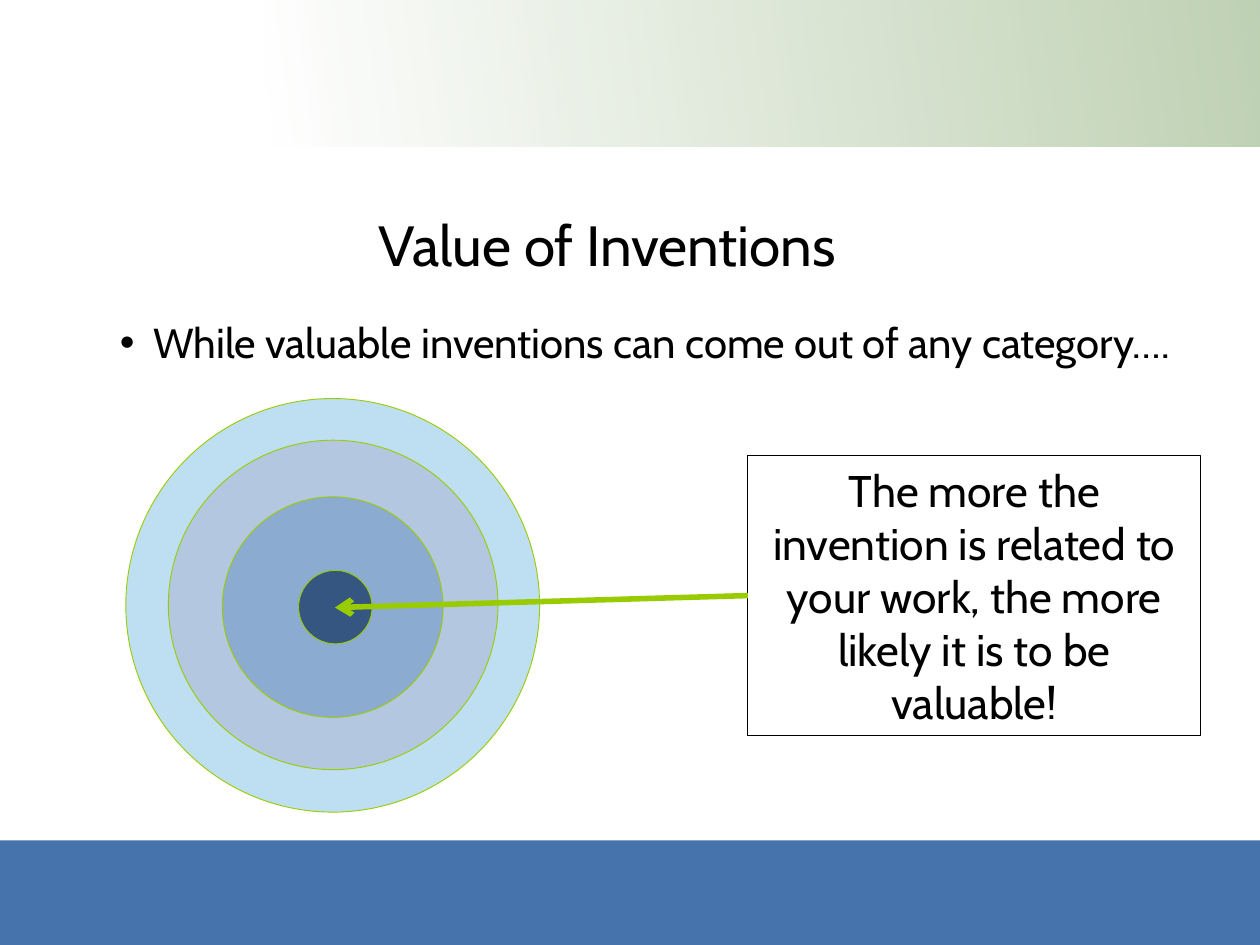
from lxml import etree
from pptx import Presentation
from pptx.dml.color import RGBColor
from pptx.enum.shapes import MSO_CONNECTOR, MSO_SHAPE
from pptx.enum.text import MSO_ANCHOR, MSO_AUTO_SIZE, PP_ALIGN
from pptx.oxml.ns import qn
from pptx.util import Inches, Pt

RECT, OVAL = MSO_SHAPE.RECTANGLE, MSO_SHAPE.OVAL
STRAIGHT = MSO_CONNECTOR.STRAIGHT
TOP, MIDDLE, BOTTOM = MSO_ANCHOR.TOP, MSO_ANCHOR.MIDDLE, MSO_ANCHOR.BOTTOM
CENTER, NO_FIT = PP_ALIGN.CENTER, MSO_AUTO_SIZE.NONE

BLACK = RGBColor(0x00, 0x00, 0x00)
WHITE = RGBColor(0xFF, 0xFF, 0xFF)
GREEN = RGBColor(0x50, 0x82, 0x31)
LIME = RGBColor(0x99, 0xCC, 0x00)
BLUE = RGBColor(0x46, 0x73, 0xAB)
SKY = RGBColor(0xBE, 0xDF, 0xF2)
MIST = RGBColor(0xB3, 0xC7, 0xE0)
STEEL = RGBColor(0x8C, 0xAB, 0xD0)
NAVY = RGBColor(0x35, 0x56, 0x80)


class Deck:
    font = "Cabin"

    def __init__(self, slide):
        self.slide = slide

    def shape(self, kind, box, fill=None, line=None):
        item = self.slide.shapes.add_shape(kind, *map(Inches, box))
        item.shadow.inherit = False
        if fill is None:
            item.fill.background()
        else:
            item.fill.solid()
            item.fill.fore_color.rgb = fill
        if line is None:
            item.line.fill.background()
        else:
            item.line.color.rgb = line
            item.line.width = Pt(0.75)
        return item

    def fade(self, box, colors, angle, alpha):
        item = self.shape(RECT, box)
        item.fill.gradient()
        item.fill.gradient_angle = angle
        for stop, color in zip(item.fill.gradient_stops, colors):
            stop.color.rgb = color
        for color in item._element.spPr.iter(qn("a:srgbClr")):
            etree.SubElement(color, qn("a:alpha"), val=str(alpha * 1000))

    def label(self, item, text, size, anchor, right=0.14):
        frame = item.text_frame
        frame.word_wrap = True
        frame.auto_size = NO_FIT
        frame.vertical_anchor = anchor
        frame.margin_left, frame.margin_right = Inches(0.14), Inches(right)
        frame.margin_top = frame.margin_bottom = Inches(0.07)
        frame.text = text
        para = frame.paragraphs[0]
        para.alignment = CENTER
        para.space_before = Pt(0)
        para.font.name = self.font
        para.font.size = Pt(size)
        para.font.color.rgb = BLACK

    def holder(self, index, box, text, size, anchor, right=0.14):
        item = self.slide.placeholders[index]
        item.left, item.top, item.width, item.height = map(Inches, box)
        if index:
            # No bullet or indent
            props = item.text_frame.paragraphs[0]._p.get_or_add_pPr()
            props.set("marL", "0")
            props.set("indent", "0")
            etree.SubElement(props, qn("a:buNone"))
        self.label(item, text, size, anchor, right)

    def arrow(self, start, side, end):
        x, y = map(Inches, end)
        line = self.slide.shapes.add_connector(STRAIGHT, x, y, x, y)
        line.begin_connect(start, side)
        line.line.color.rgb = LIME
        line.line.width = Pt(4.5)
        props = line._element.spPr
        etree.SubElement(props.find(qn("a:ln")), qn("a:tailEnd"), type="arrow")
        etree.SubElement(props, qn("a:effectLst"))


def main():
    show = Presentation()
    show.slide_width, show.slide_height = Inches(14.22), Inches(10.67)
    deck = Deck(show.slides.add_slide(show.slide_layouts[1]))

    # Banner and footer
    deck.fade((2.99, -0.17, 11.28, 1.82), (WHITE, GREEN), 8, 36)
    deck.shape(RECT, (0, 9.49, 14.26, 1.24), BLUE)

    # Title and lead line
    deck.holder(0, (1.56, 1.75, 11.44, 1.46), "Value of Inventions", 46,
                BOTTOM, right=1)
    deck.holder(1, (0.88, 3.51, 12.8, 3.34),
                "While valuable inventions can come out of any category….",
                34, TOP)

    # Target rings, from the outside in
    rings = ((1.42, 4.5, 4.67, SKY), (1.9, 4.97, 3.72, MIST),
             (2.51, 5.61, 2.49, STEEL), (3.37, 6.44, 0.83, NAVY))
    for left, top, size, color in rings:
        deck.shape(OVAL, (left, top, size, size), color, LIME)

    # Callout and arrow to the centre
    note = deck.shape(RECT, (8.44, 5.14, 5.11, 3.17), line=BLACK)
    deck.label(note, "The more the invention is related to your work, "
               "the more likely it is to be valuable!", 36, MIDDLE)
    deck.arrow(note, 1, (3.78, 6.86))

    show.save("out.pptx")


if __name__ == "__main__":
    main()
